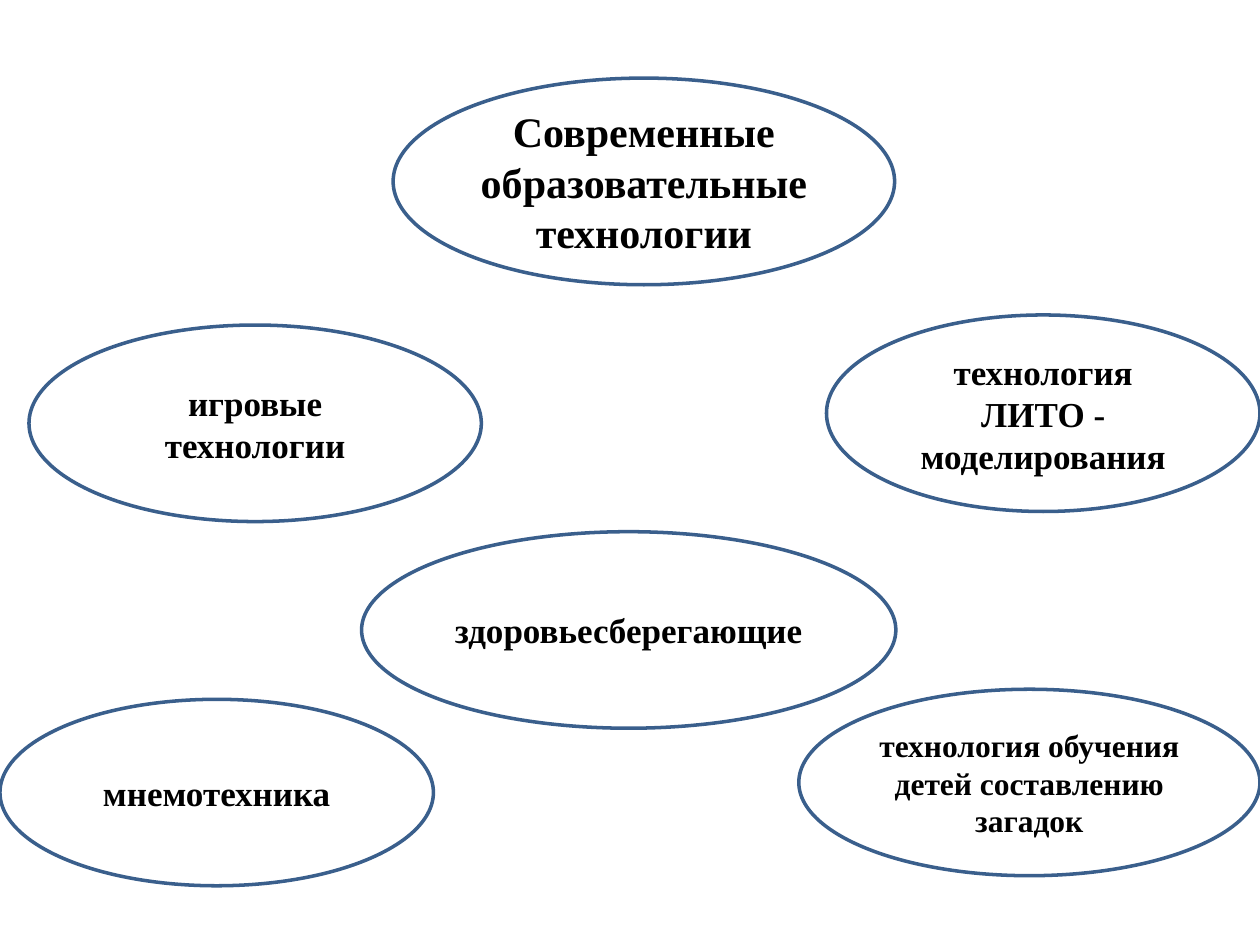
from dataclasses import dataclass

from pptx import Presentation
from pptx.dml.color import RGBColor
from pptx.enum import shapes, text
from pptx.util import Inches, Pt

HUES = {"fill": "FFFFFF", "line": "3A5F8C", "text": "000000"}
FONT = "Times New Roman"


@dataclass
class Oval:
    words: str
    left: float
    top: float
    width: float
    height: float = 1.56
    size: int = 20


OVALS = [
    Oval("здоровьесберегающие", 2.87, 4.22, 4.24),
    Oval("игровые\nтехнологии", 0.23, 2.58, 3.59),
    Oval("мнемотехника", 0, 5.55, 3.44, 1.48),
    Oval("технология обучения детей составлению загадок", 6.34, 5.47, 3.66, 1.48, 18),
    Oval("Современные образовательные технологии", 3.12, 0.62, 3.98, 1.64, 24),
    Oval("технология\vЛИТО - моделирования", 6.56, 2.5, 3.44),
]


def hue(name: str) -> RGBColor:
    return RGBColor.from_string(HUES[name])


def write(frame, words: str, *, size: int, bold: bool = True, color: str = "text") -> None:
    """Fill a text frame with centred text, one paragraph per line of words."""
    frame.word_wrap = True
    frame.vertical_anchor = text.MSO_ANCHOR.MIDDLE
    frame.text = words
    for para in frame.paragraphs:
        para.alignment = text.PP_ALIGN.CENTER
        for run in para.runs:
            run.font.name = FONT
            run.font.size = Pt(size)
            run.font.bold = bold
            run.font.color.rgb = hue(color)


def draw(slide, oval: Oval) -> None:
    box = map(Inches, (oval.left, oval.top, oval.width, oval.height))
    shape = slide.shapes.add_shape(shapes.MSO_SHAPE.OVAL, *box)
    shape.shadow.inherit = False
    shape.fill.solid()
    shape.fill.fore_color.rgb = hue("fill")
    shape.line.color.rgb = hue("line")
    shape.line.width = Pt(2)
    write(shape.text_frame, oval.words, size=oval.size)


def main() -> None:
    deck = Presentation()
    deck.slide_width, deck.slide_height = Inches(10), Inches(7.5)
    slide = deck.slides.add_slide(deck.slide_layouts[6])
    for oval in OVALS:
        draw(slide, oval)
    deck.save("out.pptx")


if __name__ == "__main__":
    main()
